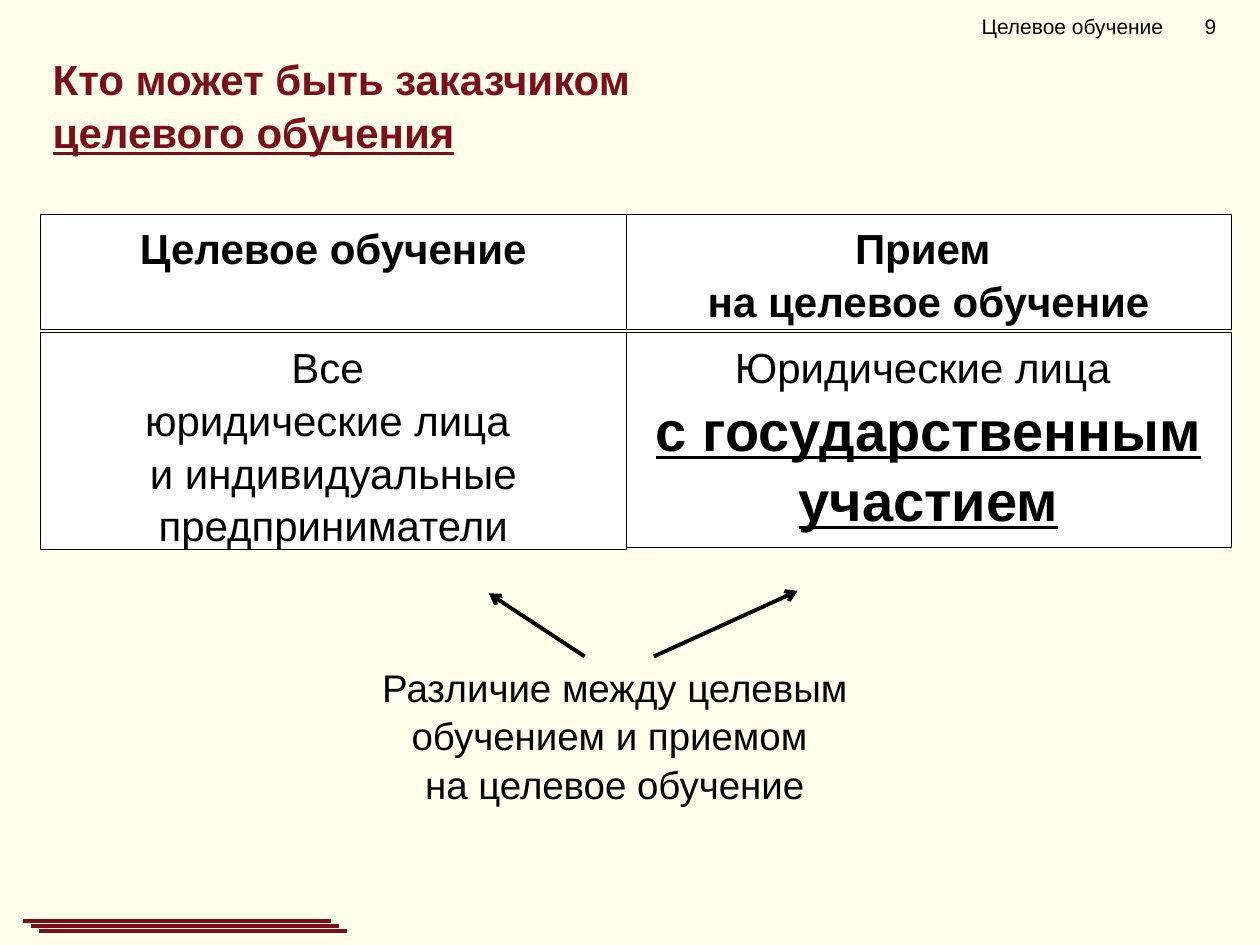
"""Builds the slide on who may order targeted training, on a 100 by 75 grid."""
from lxml.etree import SubElement
from pptx import Presentation
from pptx.dml.color import RGBColor as RGB
from pptx.enum.shapes import MSO_CONNECTOR as Conn, MSO_SHAPE as Shape
from pptx.enum.text import MSO_ANCHOR as Anchor, PP_ALIGN as Align
from pptx.oxml.ns import qn
from pptx.util import Inches, Pt

ink = {"page": "FFFFEB", "cell": "FFFFFF", "text": "000000", "wine": "7B0F19"}
deck = Presentation()
deck.slide_width, deck.slide_height = Inches(10), Inches(7.5)
unit = deck.slide_width / 100
slide = deck.slides.add_slide(deck.slide_layouts[6])
slide.background.fill.solid()
slide.background.fill.fore_color.rgb = RGB.from_string(ink["page"])


def write(box, text, size, tint="text", bold=False, align=Align.CENTER):
    frame = box.text_frame
    frame.word_wrap = True
    frame.vertical_anchor = Anchor.TOP
    frame.text = text
    for para in frame.paragraphs:
        para.alignment = align
        para.line_spacing = 1.05
        for run in para.runs:
            font = run.font
            font.name, font.size, font.bold = "Arial", Pt(size), bold
            font.color.rgb = RGB.from_string(ink[tint])
    return frame


def draw(home, ends, tint):
    line = home.add_connector(Conn.STRAIGHT, *[int(n * unit) for n in ends])
    line.line.color.rgb = RGB.from_string(ink[tint])
    line.line.width = Pt(2.25)
    SubElement(line._element.spPr, qn("a:effectLst"))
    return line


labels = [
    ((3.2, 3.6, 92.9, 4.7), "Кто может быть заказчиком\nцелевого обучения",
     24, "wine", True, Align.LEFT),
    ((74.4, 0, 25.6, 4), "Целевое обучение\t9", 12, "text", False, Align.LEFT),
    ((25.6, 52, 46.4, 12.1),
     "Различие между целевым обучением и приемом \nна целевое обучение",
     22, "text", False, Align.CENTER),
]
title, head, note = [
    write(slide.shapes.add_textbox(*[int(n * unit) for n in area]), *rest)
    for area, *rest in labels
]
title.paragraphs[1].runs[0].font.underline = True
head.vertical_anchor = Anchor.MIDDLE
head.margin_left = int(3.5 * unit)
tabs = SubElement(head.paragraphs[0]._p.get_or_add_pPr(), qn("a:tabLst"))
SubElement(tabs, qn("a:tab"), pos=str(int(17.7 * unit)), algn="l")

cols = [(3.2, 46.5), (49.7, 48)]
rows = [
    (17, (9.1, 9.1), True, ["Целевое обучение", "Прием \nна целевое обучение"]),
    (26.4, (17.2, 17), False,
     ["Все \nюридические лица \nи индивидуальные предприниматели",
      "Юридические лица \nс государственным участием"]),
]
for top, highs, bold, texts in rows:
    for (left, wide), high, text in zip(cols, highs, texts):
        area = [int(n * unit) for n in (left, top, wide, high)]
        cell = slide.shapes.add_shape(Shape.RECTANGLE, *area)
        cell.shadow.inherit = False
        cell.fill.solid()
        cell.fill.fore_color.rgb = RGB.from_string(ink["cell"])
        cell.line.color.rgb = RGB.from_string(ink["text"])
        cell.line.width = Pt(0.25)
        frame = write(cell, text, 24, bold=bold)
state = frame.paragraphs[1].runs[0].font
state.size, state.bold, state.underline = Pt(32), True, True

for ends in [(46.4, 52.1, 38.8, 47.1), (51.9, 52.1, 63.3, 46.9)]:
    arrow = draw(slide.shapes, ends, "text")
    SubElement(arrow.line._get_or_add_ln(), qn("a:tailEnd"), type="arrow")

group = slide.shapes.add_group_shape()
for step in range(3):
    left, top = 1.8 + 0.65 * step, 73.1 + 0.4 * step
    draw(group.shapes, (left, top, left + 24.45, top), "wine")

deck.save("out.pptx")
